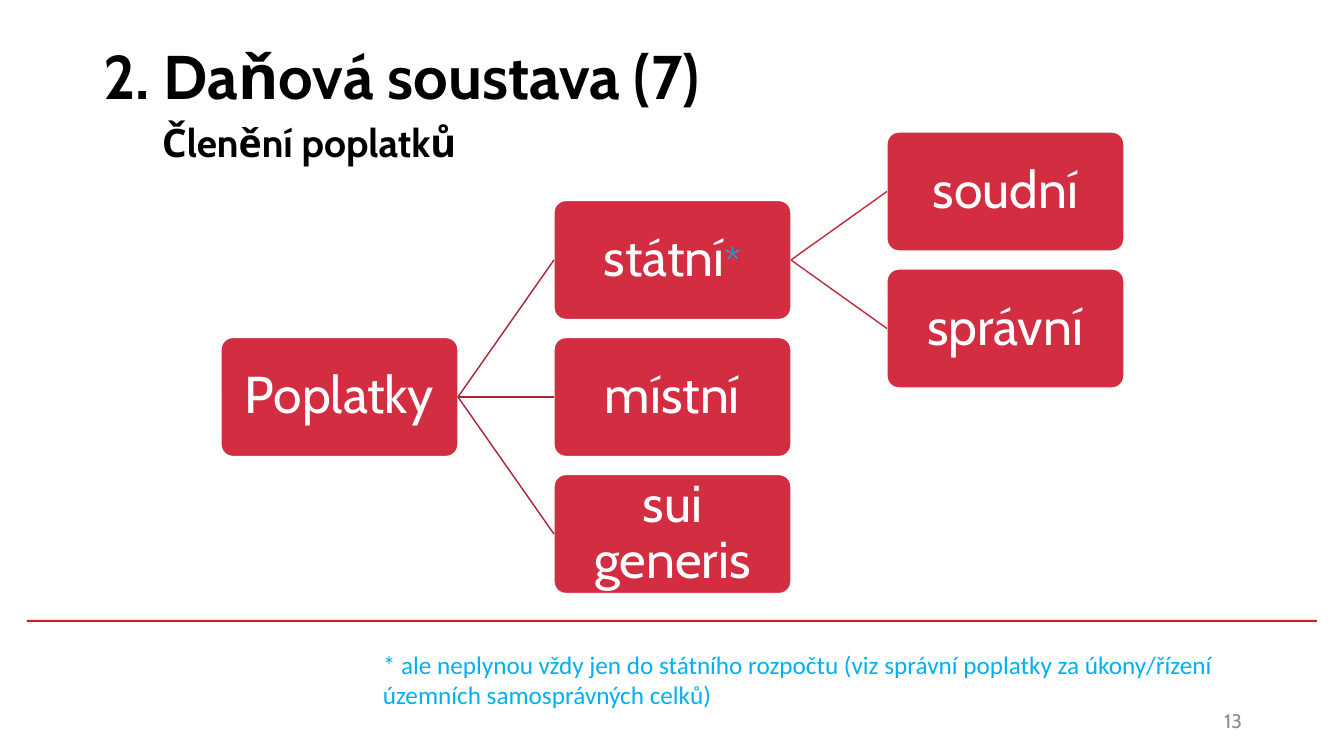
from pptx import Presentation
from pptx.dml.color import RGBColor
from pptx.enum.shapes import MSO_CONNECTOR, MSO_SHAPE
from pptx.enum.text import MSO_ANCHOR, PP_ALIGN
from pptx.oxml.ns import qn
from pptx.util import Emu, Pt
from lxml.etree import SubElement

BLACK = RGBColor(0x00, 0x00, 0x00)
WHITE = RGBColor(0xFF, 0xFF, 0xFF)
GRAY = RGBColor(0x8C, 0x8C, 0x8C)
CYAN = RGBColor(0x00, 0xB0, 0xF0)
RULE_RED = RGBColor(0xCD, 0x1F, 0x21)
NODE_RED = RGBColor(0xD2, 0x2D, 0x40)
FIRST_LINK = RGBColor(0xA8, 0x24, 0x33)
SECOND_LINK = RGBColor(0xBF, 0x29, 0x3A)

TITLE = "2. Daňová soustava (7)"
SUBTITLE = "Členění poplatků"
NOTE = ("* ale neplynou vždy jen do státního rozpočtu (viz správní poplatky "
        "za úkony/řízení územních samosprávných celků)")
PAGE_NUMBER = "13"

# label, footnote mark, column, height in half rows, parent
FEES = [
    ("Poplatky", "", 0, 3, None),
    ("státní", "*", 1, 1, "Poplatky"),
    ("místní", "", 1, 3, "Poplatky"),
    ("sui generis", "", 1, 5, "Poplatky"),
    ("soudní", "", 2, 0, "státní"),
    ("správní", "", 2, 2, "státní"),
]
LINK_COLORS = {1: FIRST_LINK, 2: SECOND_LINK}

TREE_LEFT, TREE_TOP = 221, 132
NODE_WIDTH, NODE_HEIGHT = 237, 119
COLUMN_GAP, ROW_GAP = 96, 18
NODE_INSET = 3


def px(length):
    return Emu(round(length * 914400 / 100.8))


def add_span(para, text, size, color, font="Cabin", bold=False):
    span = para.add_run()
    span.text = text
    span.font.name = font
    span.font.size = Pt(size)
    span.font.bold = bold
    span.font.color.rgb = color


def add_text(page, area, text, size, color, **style):
    box = page.shapes.add_textbox(*map(px, area))
    box.text_frame.word_wrap = True
    para = box.text_frame.paragraphs[0]
    add_span(para, text, size, color, **style)
    return box.text_frame


def add_title(page):
    title = page.shapes.title
    title.left, title.top, title.width, title.height = map(px, (93, 2, 1159, 146))
    title.text_frame.vertical_anchor = MSO_ANCHOR.MIDDLE
    para = title.text_frame.paragraphs[0]
    para.alignment = PP_ALIGN.LEFT
    add_span(para, TITLE, 44, BLACK, bold=True)


def add_rule(page):
    rule = page.shapes.add_shape(MSO_SHAPE.RECTANGLE, *map(px, (27, 620, 1290, 2)))
    rule.shadow.inherit = False
    rule.fill.solid()
    rule.fill.fore_color.rgb = RULE_RED
    rule.line.fill.background()


def add_node(page, label, mark, column, half_row):
    left = TREE_LEFT + column * (NODE_WIDTH + COLUMN_GAP)
    top = TREE_TOP + half_row * (NODE_HEIGHT + ROW_GAP) / 2
    node = page.shapes.add_shape(MSO_SHAPE.ROUNDED_RECTANGLE, px(left), px(top),
                                 px(NODE_WIDTH), px(NODE_HEIGHT))
    node.adjustments[0] = 0.1
    node.shadow.inherit = False
    node.fill.solid()
    node.fill.fore_color.rgb = NODE_RED
    node.line.color.rgb = WHITE
    node.line.width = Pt(1)
    frame = node.text_frame
    frame.word_wrap = True
    frame.vertical_anchor = MSO_ANCHOR.MIDDLE
    frame.margin_left = frame.margin_right = px(NODE_INSET)
    frame.margin_top = frame.margin_bottom = px(NODE_INSET)
    para = frame.paragraphs[0]
    para.alignment = PP_ALIGN.CENTER
    para.line_spacing = 0.9
    add_span(para, label, 37, WHITE)
    if mark:
        add_span(para, mark, 28, CYAN)
    return node


def link_nodes(page, parent, child, color):
    link = page.shapes.add_connector(MSO_CONNECTOR.STRAIGHT, 0, 0, 0, 0)
    link.begin_connect(parent, 3)
    link.end_connect(child, 1)
    link.line.color.rgb = color
    link.line.width = Pt(1)
    SubElement(link._element.spPr, qn("a:effectLst"))


def main():
    deck = Presentation()
    deck.slide_width, deck.slide_height = px(1344), px(756)
    page = deck.slides.add_slide(deck.slide_layouts[5])

    add_rule(page)
    add_title(page)
    add_text(page, (152, 113, 775, 57), SUBTITLE, 28, BLACK, bold=True)

    nodes = {}
    for label, mark, column, half_row, parent in FEES:
        nodes[label] = add_node(page, label, mark, column, half_row)
        if parent:
            link_nodes(page, nodes[parent], nodes[label], LINK_COLORS[column])

    add_text(page, (373, 644, 858, 72), NOTE, 18, CYAN, font="Calibri")
    number = add_text(page, (950, 701, 302, 40), PAGE_NUMBER, 14, GRAY)
    number.vertical_anchor = MSO_ANCHOR.MIDDLE
    number.paragraphs[0].alignment = PP_ALIGN.RIGHT

    deck.save("out.pptx")


if __name__ == "__main__":
    main()
